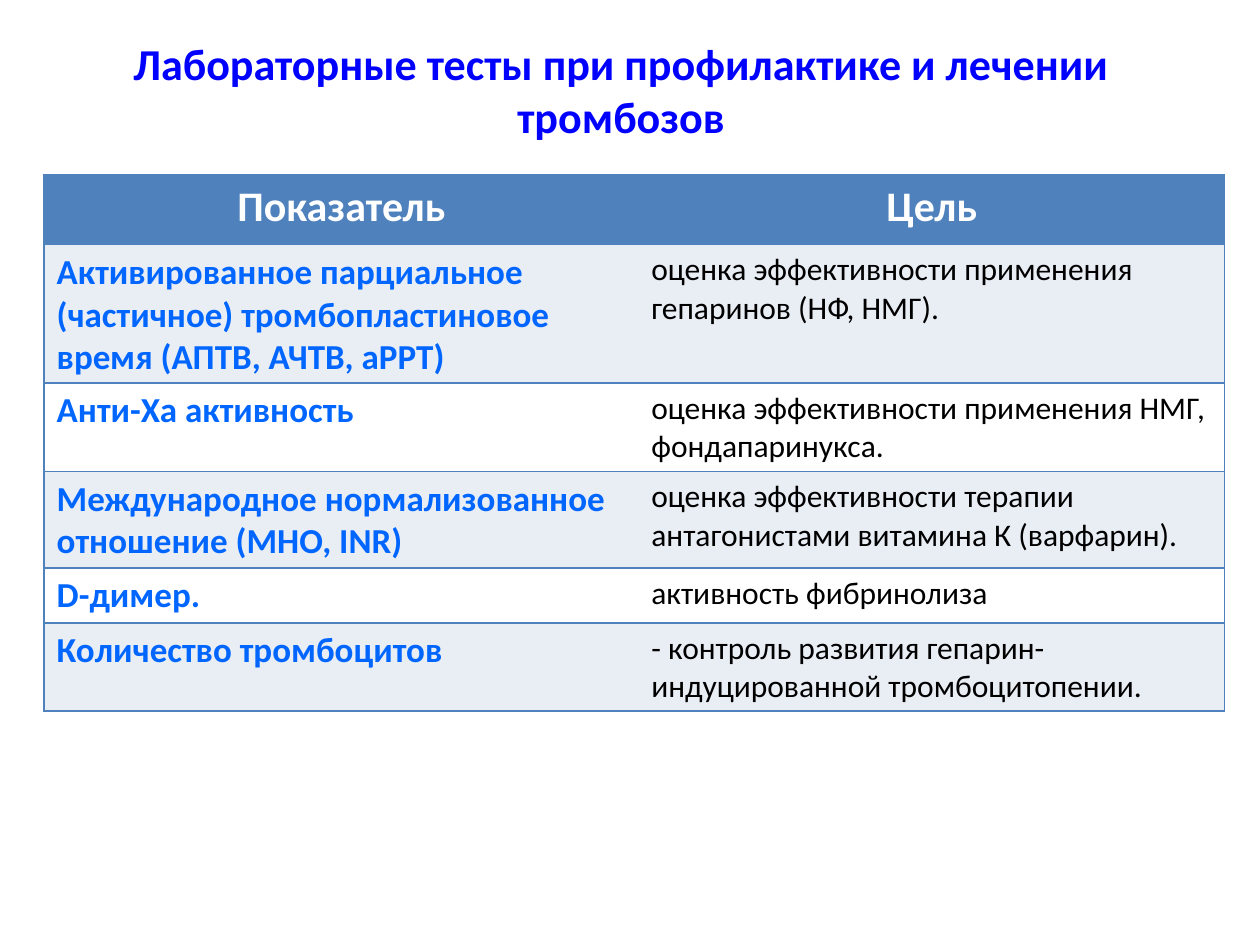
import pptx
import pptx.dml.color
import pptx.enum.text
import pptx.oxml.ns
import pptx.util
from lxml import etree
from pptx.dml.color import RGBColor
from pptx.util import Inches

FONT = "Calibri"
TITLE_BLUE = RGBColor(0x00, 0x00, 0xFF)
TEST_BLUE = RGBColor(0x00, 0x66, 0xFF)
HEADER_BLUE = RGBColor(0x4F, 0x81, 0xBD)
BAND = RGBColor(0xE9, 0xED, 0xF4)
WHITE = RGBColor(0xFF, 0xFF, 0xFF)
BLACK = RGBColor(0x00, 0x00, 0x00)
CENTER = pptx.enum.text.PP_ALIGN.CENTER
LEFT = pptx.enum.text.PP_ALIGN.LEFT

TITLE = "Лабораторные тесты при профилактике и лечении тромбозов"
HEADERS = ("Показатель", "Цель")
TESTS = [
    ("Активированное парциальное (частичное) тромбопластиновое время (АПТВ, АЧТВ, aPPT)",
     "оценка эффективности применения гепаринов (НФ, НМГ)."),
    ("Анти-Ха активность",
     "оценка эффективности применения НМГ, фондапаринукса."),
    ("Международное нормализованное отношение (МНО, INR)",
     "оценка эффективности терапии антагонистами витамина К (варфарин)."),
    ("D-димер.", "активность фибринолиза"),
    ("Количество тромбоцитов",
     "- контроль развития гепарин-индуцированной тромбоцитопении."),
]
COLUMN_WIDTHS = (4.72, 4.65)
ROW_HEIGHTS = (0.55, 1.02, 0.47, 0.67, 0.43, 0.56)


def write_text(frame, text, size, color, bold, alignment):
    paragraph = frame.paragraphs[0]
    paragraph.alignment = alignment
    run = paragraph.add_run()
    run.text = text
    run.font.name = FONT
    run.font.size = pptx.util.Pt(size)
    run.font.bold = bold
    run.font.color.rgb = color


def set_borders(cell, visible_sides):
    properties = cell._tc.get_or_add_tcPr()
    for side in "LRTB":
        line = etree.SubElement(properties, pptx.oxml.ns.qn(f"a:ln{side}"),
                                w=str(pptx.util.Pt(1)))
        if side in visible_sides:
            fill = etree.SubElement(line, pptx.oxml.ns.qn("a:solidFill"))
            etree.SubElement(fill, pptx.oxml.ns.qn("a:srgbClr"), val=str(HEADER_BLUE))
        else:
            etree.SubElement(line, pptx.oxml.ns.qn("a:noFill"))


def fill_cell(cell, text, size, color, bold, alignment, background, visible_sides):
    set_borders(cell, visible_sides)
    cell.fill.solid()
    cell.fill.fore_color.rgb = background
    write_text(cell.text_frame, text, size, color, bold, alignment)


def add_title(slide):
    title = slide.shapes.add_textbox(Inches(0.43), Inches(0.44), Inches(9), Inches(0.54))
    frame = title.text_frame
    frame.word_wrap = True
    frame.vertical_anchor = pptx.enum.text.MSO_ANCHOR.MIDDLE
    write_text(frame, TITLE, 25.2, TITLE_BLUE, True, CENTER)


def add_test_table(slide):
    table = slide.shapes.add_table(
        len(ROW_HEIGHTS), len(COLUMN_WIDTHS), Inches(0.35), Inches(1.39),
        Inches(sum(COLUMN_WIDTHS)), Inches(sum(ROW_HEIGHTS))).table
    for column, width in zip(table.columns, COLUMN_WIDTHS):
        column.width = Inches(width)
    for row, height in zip(table.rows, ROW_HEIGHTS):
        row.height = Inches(height)

    # Outer sides and row lines only: no line between the columns
    sides = ("LTB", "RTB")
    for column, header in enumerate(HEADERS):
        fill_cell(table.cell(0, column), header, 24, WHITE, True, CENTER,
                  HEADER_BLUE, sides[column])

    # Banded body rows
    for row, (test, purpose) in enumerate(TESTS, start=1):
        background = BAND if row % 2 else WHITE
        fill_cell(table.cell(row, 0), test, 20, TEST_BLUE, True, LEFT, background, sides[0])
        fill_cell(table.cell(row, 1), purpose, 18, BLACK, False, LEFT, background, sides[1])


def main():
    presentation = pptx.Presentation()
    presentation.slide_width = Inches(10)
    presentation.slide_height = Inches(7.5)
    slide = presentation.slides.add_slide(presentation.slide_layouts[6])
    add_title(slide)
    add_test_table(slide)
    presentation.save("out.pptx")


if __name__ == "__main__":
    main()
